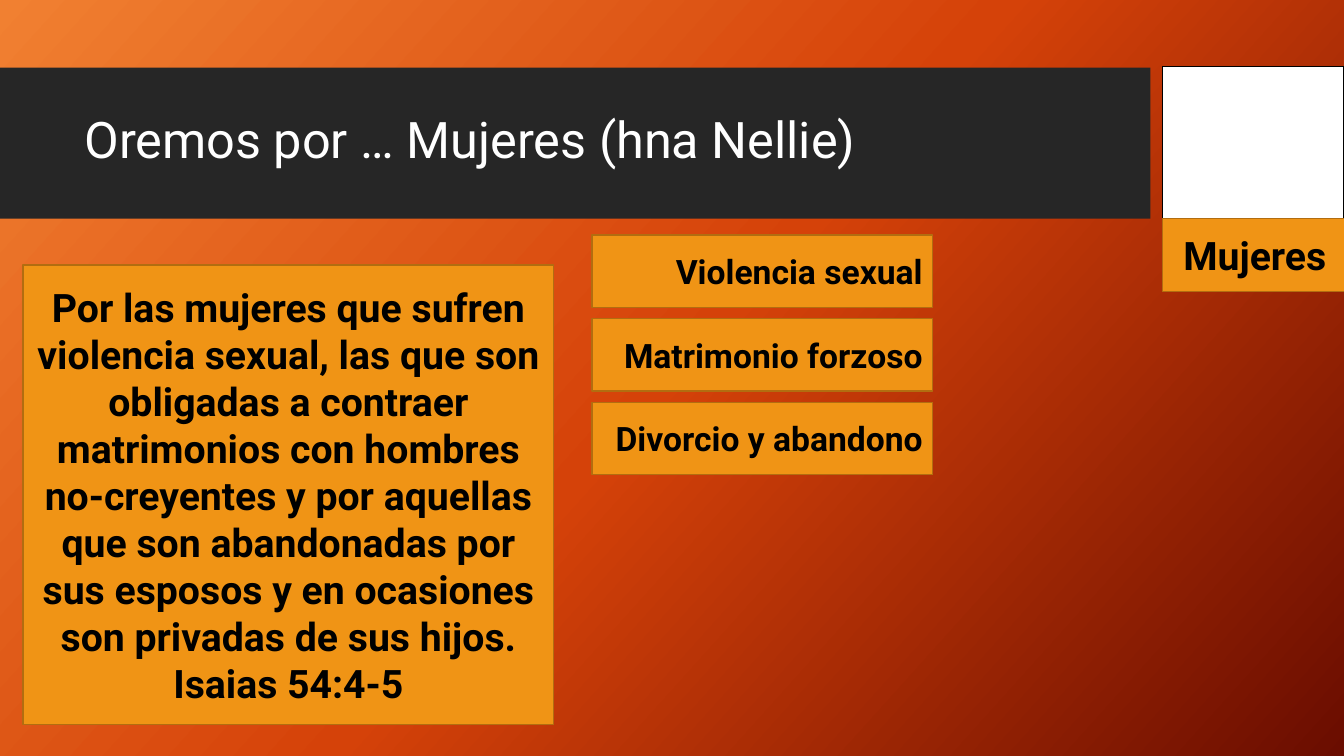
from copy import deepcopy

from pptx import Presentation
from pptx.dml.color import RGBColor
from pptx.enum.shapes import MSO_SHAPE as Shape
from pptx.enum.text import MSO_ANCHOR as Anchor, PP_ALIGN as Align
from pptx.oxml.ns import qn
from pptx.util import Pt

PX = 9144
FONT = "Roboto"
ORANGE = "F09415"
ORANGE_EDGE = "B26D10"
BLACK = "000000"
WHITE = "FFFFFF"
CHARCOAL = "262626"
BACKGROUND = [(0, "F18031"), (0.5, "D54209"), (1, "6A0D00")]

PRAYER = (
    "Por las mujeres que sufren violencia sexual, las que son obligadas a "
    "contraer matrimonios con hombres no-creyentes y por aquellas que son "
    "abandonadas por sus esposos y en ocasiones son privadas de sus hijos. "
    "Isaias 54:4-5"
)
TOPICS = ["Violencia sexual", "Matrimonio forzoso", "Divorcio y abandono"]


def color(value):
    return RGBColor.from_string(value)


def emu(*lengths):
    return [length * PX for length in lengths]


def paint_background(slide):
    fill = slide.background.fill
    fill.gradient()
    stop_list = slide.element.find(".//" + qn("a:gsLst"))
    stop_list.append(deepcopy(stop_list[-1]))
    for stop, (position, value) in zip(fill.gradient_stops, BACKGROUND):
        stop.position = position
        stop.color.rgb = color(value)
    fill.gradient_angle = 318


def write(shape, text, size, value, align, bold=True):
    frame = shape.text_frame
    frame.word_wrap = True
    frame.vertical_anchor = Anchor.MIDDLE
    paragraph = frame.paragraphs[0]
    paragraph.alignment = align
    run = paragraph.add_run()
    run.text = text
    run.font.name = FONT
    run.font.size = Pt(size)
    run.font.bold = bold
    run.font.color.rgb = color(value)
    return paragraph


def add_box(slide, box, fill, edge=None):
    shape = slide.shapes.add_shape(Shape.RECTANGLE, *emu(*box))
    shape.shadow.inherit = False
    shape.fill.solid()
    shape.fill.fore_color.rgb = color(fill)
    if edge:
        shape.line.color.rgb = color(edge)
        shape.line.width = Pt(1)
    else:
        shape.line.fill.background()
    return shape


def add_card(slide, box, text, size, align=Align.CENTER):
    write(add_box(slide, box, ORANGE, ORANGE_EDGE), text, size, BLACK, align)


def add_title(slide, box, text):
    shape = slide.shapes.add_textbox(*emu(*box))
    paragraph = write(shape, text, 36, WHITE, Align.LEFT, bold=False)
    paragraph.line_spacing = 0.9


def main():
    presentation = Presentation()
    presentation.slide_width, presentation.slide_height = emu(1333, 750)
    slide = presentation.slides.add_slide(presentation.slide_layouts[6])
    paint_background(slide)

    add_box(slide, (0, 67, 1141, 150), CHARCOAL)
    add_title(slide, (74, 82, 1051, 118), "Oremos por … Mujeres (hna Nellie)")
    add_box(slide, (1153, 66, 180, 151), WHITE, BLACK)
    add_card(slide, (1153, 217, 183, 72), "Mujeres", 28)
    add_card(slide, (23, 263, 526, 456), PRAYER, 28)
    for index, topic in enumerate(TOPICS):
        add_card(slide, (587, 233 + 83 * index, 338, 72), topic, 24, Align.RIGHT)

    presentation.save("out.pptx")


if __name__ == "__main__":
    main()
